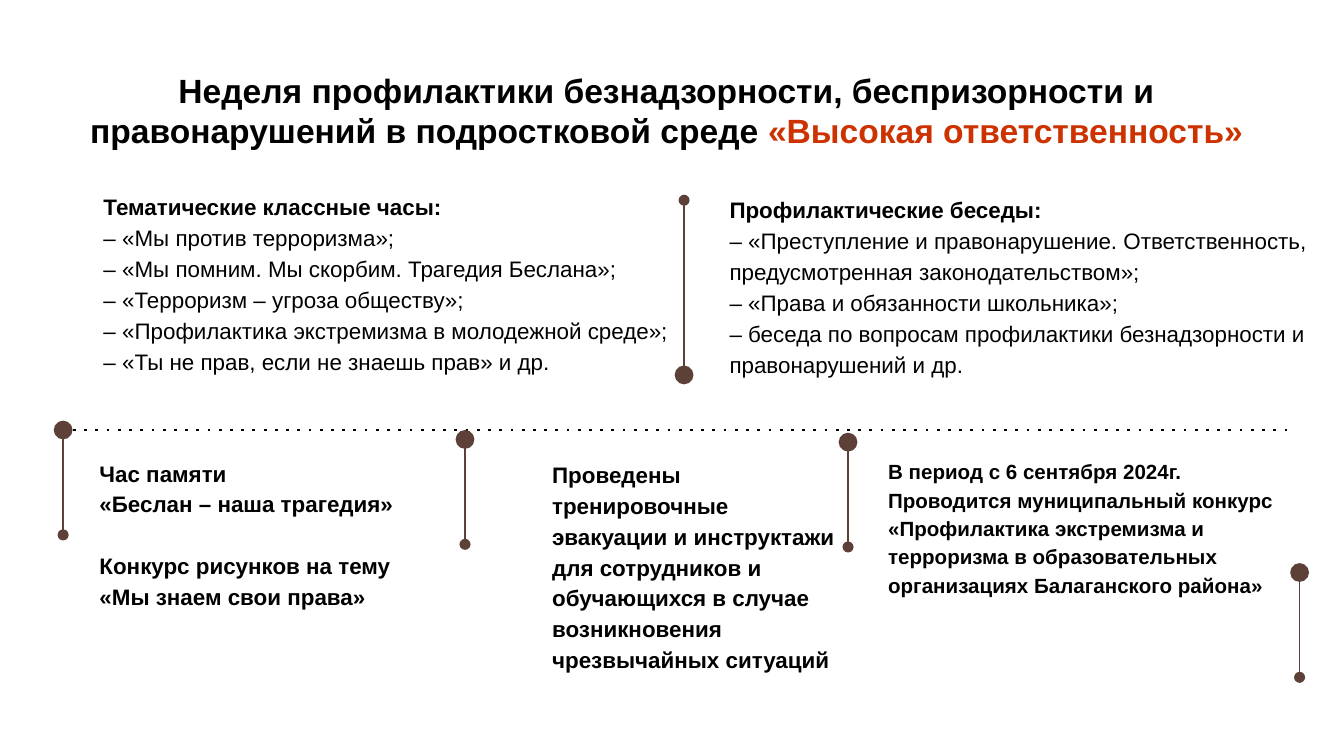
from pptx import Presentation
from pptx.dml.color import RGBColor
from pptx.enum.shapes import MSO_CONNECTOR, MSO_SHAPE
from pptx.enum.text import MSO_ANCHOR, MSO_AUTO_SIZE, PP_ALIGN
from pptx.oxml.ns import qn
from pptx.util import Inches, Pt
from lxml import etree

BLACK = RGBColor(0x00, 0x00, 0x00)
BROWN = RGBColor(0x5D, 0x40, 0x37)
RED = RGBColor(0xCC, 0x33, 0x00)
FONT = "Arial"
WIDTH = Inches(10)
HEIGHT = WIDTH * 9 // 16
DOT = 0.14
LINE_GAP = 16.5  # one text line, in points

# Content
TITLE = [
    ("Неделя профилактики безнадзорности, беспризорности и "
     "правонарушений в подростковой среде ", BLACK),
    ("«Высокая ответственность»", RED),
]
HOURS = [
    "Тематические классные часы:",
    "– «Мы против терроризма»;",
    "– «Мы помним. Мы скорбим. Трагедия Беслана»;",
    "– «Терроризм – угроза обществу»;",
    "– «Профилактика экстремизма в молодежной среде»;",
    "– «Ты не прав, если не знаешь прав» и др.",
]
TALKS = [
    "Профилактические беседы:",
    "– «Преступление и правонарушение. Ответственность, "
    "предусмотренная законодательством»;",
    "– «Права и обязанности школьника»;",
    "– беседа по вопросам профилактики безнадзорности и правонарушений и др.",
]
MEMORY = [
    "Час памяти",
    "«Беслан – наша трагедия»",
    "Конкурс рисунков на тему «Мы знаем свои права»",
]
DRILLS = ["Проведены тренировочные эвакуации и инструктажи для сотрудников "
          "и обучающихся в случае возникновения чрезвычайных ситуаций"]
CONTEST = ["В период с 6 сентября 2024г. Проводится муниципальный конкурс "
           "«Профилактика экстремизма и терроризма в образовательных "
           "организациях Балаганского района»"]

# Pins: centre of the big dot (x, y) and signed reach of the stem
PINS = [
    (0.47, 3.20, 0.78),
    (3.46, 3.27, 0.78),
    (5.09, 2.79, -1.30),
    (6.31, 3.29, 0.78),
    (9.67, 4.26, 0.78),
]


def place(shape, box):
    shape.left, shape.top, shape.width, shape.height = map(Inches, box)
    frame = shape.text_frame
    frame.word_wrap = True
    frame.auto_size = MSO_AUTO_SIZE.NONE
    frame.margin_left = frame.margin_right = Inches(0.1)
    frame.margin_top = frame.margin_bottom = Inches(0.1)
    frame.vertical_anchor = MSO_ANCHOR.TOP
    return frame


def style(run, size, bold=True, color=BLACK):
    font = run.font
    font.name, font.size, font.bold = FONT, Pt(size), bold
    font.color.rgb = color


def write(shape, box, lines, size=12, bold=True):
    """Fill a text shape; the first line is always bold."""
    frame = place(shape, box)
    frame.text = "\n".join(lines)
    for i, para in enumerate(frame.paragraphs):
        para.line_spacing = 1.15
        para.space_before = para.space_after = Pt(0)
        para.alignment = PP_ALIGN.LEFT
        props = para._p.get_or_add_pPr()
        props.set("marL", "0")
        props.set("indent", "0")
        etree.SubElement(props, qn("a:buNone"))
        style(para.runs[0], size, bold or i == 0)
    return frame


def stroke(shapes, start, end, color, width):
    line = shapes.add_connector(MSO_CONNECTOR.STRAIGHT,
                                *map(Inches, start + end))
    line.line.color.rgb = color
    line.line.width = Pt(width)
    etree.SubElement(line._element.spPr, qn("a:effectLst"))
    return line


def finish(line, tag, **values):
    """Add a dash or an end mark to a line."""
    etree.SubElement(line.line._get_or_add_ln(), qn(tag), **values)


def pin(shapes, x, y, reach):
    group = shapes.add_group_shape().shapes
    stem = stroke(group, (x, y), (x, y + reach), BROWN, 0.75)
    finish(stem, "a:tailEnd", type="oval")
    dot = group.add_shape(MSO_SHAPE.OVAL, Inches(x - DOT / 2),
                          Inches(y - DOT / 2), Inches(DOT), Inches(DOT))
    dot.shadow.inherit = False
    dot.fill.solid()
    dot.fill.fore_color.rgb = BROWN
    dot.line.fill.background()


def main():
    prs = Presentation()
    prs.slide_width, prs.slide_height = WIDTH, HEIGHT
    slide = prs.slides.add_slide(prs.slide_layouts[3])
    shapes = slide.shapes
    title, left, low = slide.placeholders

    # Divider and pins
    rule = stroke(shapes, (0.46, 3.2), (9.58, 3.2), BLACK, 1.5)
    finish(rule, "a:prstDash", val="dot")
    for spot in PINS:
        pin(shapes, *spot)

    # Title
    frame = place(title, (0.3, 0.31, 9.32, 0.91))
    frame.vertical_anchor = MSO_ANCHOR.BOTTOM
    head = frame.paragraphs[0]
    head.alignment = PP_ALIGN.CENTER
    for text, color in TITLE:
        run = head.add_run()
        run.text = text
        style(run, 18, color=color)

    # Upper row: lists
    def box():
        return shapes.add_textbox(0, 0, 0, 0)

    write(left, (0.67, 1.31, 4.62, 1.53), HOURS, bold=False)
    write(box(), (5.33, 1.33, 4.53, 1.53), TALKS, bold=False)

    # Lower row: events
    events = write(low, (0.64, 3.29, 2.78, 1.32), MEMORY)
    events.paragraphs[-1].space_before = Pt(LINE_GAP)
    write(box(), (4.01, 3.3, 2.38, 1.32), DRILLS)
    write(box(), (6.51, 3.29, 3.34, 1.21), CONTEST, size=11)

    prs.save("out.pptx")


if __name__ == "__main__":
    main()
